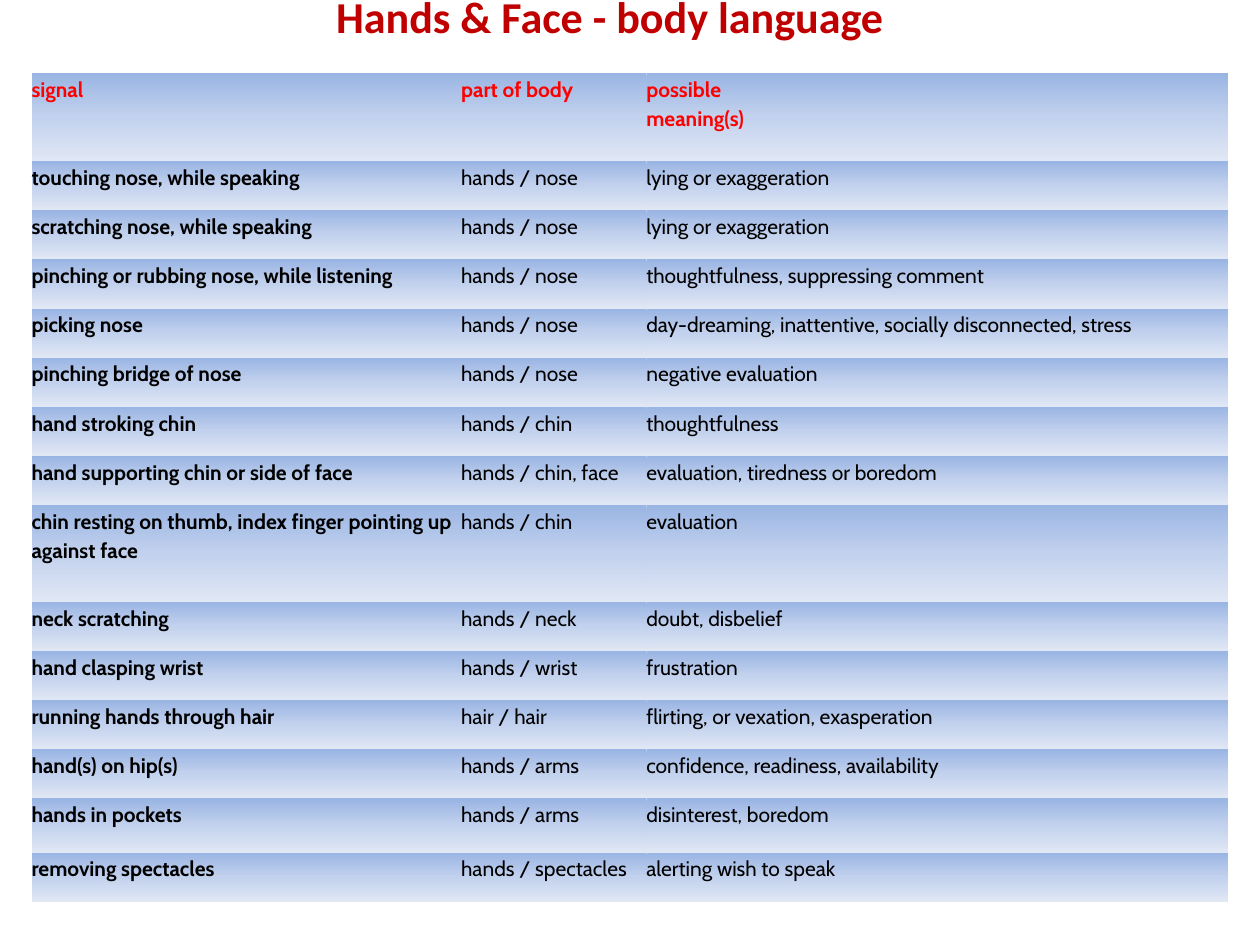
from lxml.etree import SubElement
from pptx import Presentation
from pptx.dml.color import RGBColor
from pptx.enum.text import MSO_ANCHOR as Anchor, MSO_AUTO_SIZE as Fit, PP_ALIGN as Align
from pptx.oxml.ns import qn
from pptx.util import Inches, Pt

COLORS = {
    "title": "C00000", "head": "FF0000", "text": "000000",
    "top": "9AB5E4", "mid": "C2D1ED", "base": "E1E8F5",
}
STOPS = ((0, "top"), (50, "mid"), (100, "base"))
PLAIN = "{2D5ABB26-0587-4C30-8999-92F81FD0307C}"  # table style without grid

# Table grid, in inches
LEFT, TOP = 0.25, 0.58
COLS = (3.41, 1.47, 4.62)
ROW = 0.39
TALL = {0: 0.7, 8: 0.77, 13: 0.43}

ROWS = (
    ("signal", "part of body", "possible \nmeaning(s)"),
    ("touching nose, while speaking", "hands / nose", "lying or exaggeration"),
    ("scratching nose, while speaking", "hands / nose", "lying or exaggeration"),
    ("pinching or rubbing nose, while listening", "hands / nose",
     "thoughtfulness, suppressing comment"),
    ("picking nose", "hands / nose",
     "day-dreaming, inattentive, socially disconnected, stress"),
    ("pinching bridge of nose", "hands / nose", "negative evaluation"),
    ("hand stroking chin", "hands / chin", "thoughtfulness"),
    ("hand supporting chin or side of face", "hands / chin, face",
     "evaluation, tiredness or boredom"),
    ("chin resting on thumb, index finger pointing up against face",
     "hands / chin", "evaluation"),
    ("neck scratching", "hands / neck", "doubt, disbelief"),
    ("hand clasping wrist", "hands / wrist", "frustration"),
    ("running hands through hair", "hair / hair",
     "flirting, or vexation, exasperation"),
    ("hand(s) on hip(s)", "hands / arms", "confidence, readiness, availability"),
    ("hands in pockets", "hands / arms", "disinterest, boredom"),
    ("removing spectacles", "hands / spectacles", "alerting wish to speak"),
)


def add_text(para, text, font, size, color, bold):
    """Add one run per line, with line breaks between them."""
    for i, line in enumerate(text.split("\n")):
        if i:
            para.add_line_break()
        if line:
            run = para.add_run()
            run.text = line
            run.font.name, run.font.size, run.font.bold = font, Pt(size), bold
            run.font.color.rgb = RGBColor.from_string(COLORS[color])


def shade(cell):
    """Fill a cell with the vertical three-stop gradient."""
    cell.fill.gradient()
    cell.fill.gradient_angle = 270
    stops = cell._tc.get_or_add_tcPr().find(".//" + qn("a:gsLst"))
    for old in list(stops):
        stops.remove(old)
    for pos, name in STOPS:
        stop = SubElement(stops, qn("a:gs"), pos=str(pos * 1000))
        SubElement(stop, qn("a:srgbClr"), val=COLORS[name])


def fill_cell(cell, text, color, bold):
    cell.margin_left = cell.margin_right = 0
    cell.margin_top = cell.margin_bottom = 0
    shade(cell)
    para = cell.text_frame.paragraphs[0]
    para.line_spacing = 1.15
    add_text(para, text, "Cabin", 12, color, bold)


def add_grid(slide):
    highs = [TALL.get(i, ROW) for i in range(len(ROWS))]
    frame = slide.shapes.add_table(
        len(ROWS), len(COLS), Inches(LEFT), Inches(TOP),
        Inches(sum(COLS)), Inches(sum(highs)))
    frame.element.find(".//" + qn("a:tableStyleId")).text = PLAIN
    table = frame.table
    table.horz_banding = False
    for col, wide in zip(table.columns, COLS):
        col.width = Inches(wide)
    for r, (row, high) in enumerate(zip(table.rows, highs)):
        row.height = Inches(high)
        for c, cell in enumerate(row.cells):
            fill_cell(cell, ROWS[r][c], "text" if r else "head", r == 0 or c == 0)


def set_title(slide):
    title = slide.shapes.title
    title.left, title.top = Inches(0.67), Inches(0.17)
    title.width, title.height = Inches(8.42), Inches(0.33)
    frame = title.text_frame
    frame.word_wrap, frame.auto_size = True, Fit.NONE
    frame.vertical_anchor = Anchor.MIDDLE
    para = frame.paragraphs[0]
    para.alignment = Align.CENTER
    # The closing line break lifts the heading above the box's middle
    add_text(para, "Hands & Face - body language \n", "Calibri", 25.2, "title", True)
    # Give the line after the break the heading's size
    end = SubElement(para._p, qn("a:endParaRPr"), sz="2520", b="1")
    SubElement(end, qn("a:latin"), typeface="Calibri")


def main():
    deck = Presentation()
    deck.slide_width, deck.slide_height = Inches(10), Inches(7.5)
    slide = deck.slides.add_slide(deck.slide_layouts[5])
    add_grid(slide)
    set_title(slide)
    deck.save("out.pptx")


if __name__ == "__main__":
    main()
